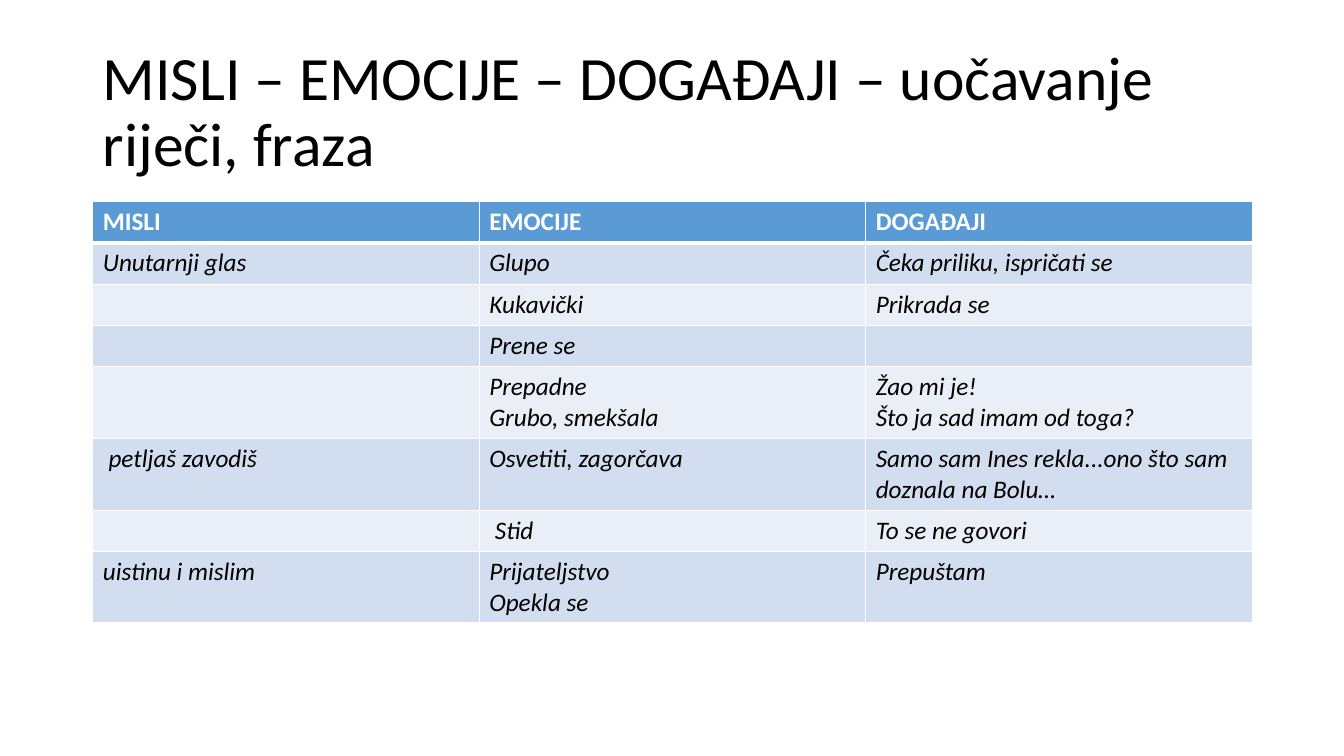
from lxml.etree import SubElement
from pptx import Presentation
from pptx.dml.color import RGBColor
from pptx.enum.text import MSO_ANCHOR, PP_ALIGN
from pptx.oxml.ns import qn
from pptx.util import Inches, Pt

TITLE = "MISLI – EMOCIJE – DOGAĐAJI – uočavanje riječi, fraza"
ROWS = [
    ("MISLI", "EMOCIJE", "DOGAĐAJI"),
    ("Unutarnji glas", "Glupo", "Čeka priliku, ispričati se"),
    ("", "Kukavički", "Prikrada se"),
    ("", "Prene se", ""),
    ("", "Prepadne\nGrubo, smekšala", "Žao mi je!\nŠto ja sad imam od toga?"),
    (" petljaš zavodiš", "Osvetiti, zagorčava",
     "Samo sam Ines rekla...ono što sam doznala na Bolu…"),
    ("", " Stid", "To se ne govori"),
    ("uistinu i mislim", "Prijateljstvo\nOpekla se", "Prepuštam"),
]
COLORS = {"text": "000000", "line": "FFFFFF", "head": "5B9BD5",
          "odd": "D2DEEF", "even": "EAEFF7"}
FONT = "Calibri"
WIDTH, HEIGHT = Inches(13.33), Inches(7.5)
LEFT, SPAN = Inches(0.92), Inches(11.5)
TOP, ROW_H = Inches(2), Inches(0.41)


def put_text(frame, text, size=18, color="text", bold=False, italic=False,
             spacing=None):
    frame.word_wrap = True
    for i, line in enumerate(text.split("\n")):
        par = frame.add_paragraph() if i else frame.paragraphs[0]
        par.alignment = PP_ALIGN.LEFT
        par.line_spacing = spacing
        font = par.font
        if line:
            run = par.add_run()
            run.text = line
            font = run.font
        font.name, font.size = FONT, Pt(size)
        font.bold, font.italic = bold, italic
        font.color.rgb = RGBColor.from_string(COLORS[color])


def set_fill(cell, color):
    cell.fill.solid()
    cell.fill.fore_color.rgb = RGBColor.from_string(COLORS[color])


def set_lines(cell, top=1, bottom=1):
    """Draw all four cell borders, with widths in points."""
    props = cell._tc.get_or_add_tcPr()
    sides = {"L": 1, "R": 1, "T": top, "B": bottom}
    for i, (side, width) in enumerate(sides.items()):
        line = SubElement(props, qn(f"a:ln{side}"), w=str(Pt(width)))
        fill = SubElement(line, qn("a:solidFill"))
        SubElement(fill, qn("a:srgbClr"), val=COLORS["line"])
        props.insert(i, line)


def add_title(slide):
    title = slide.shapes.title
    title.left, title.top = LEFT, Inches(0.4)
    title.width, title.height = SPAN, Inches(1.45)
    title.text_frame.vertical_anchor = MSO_ANCHOR.MIDDLE
    put_text(title.text_frame, TITLE, size=44, spacing=0.9)


def add_grid(slide):
    count, cols = len(ROWS), len(ROWS[0])
    table = slide.shapes.add_table(count, cols, LEFT, TOP, SPAN,
                                   ROW_H * count).table
    for r, row in enumerate(ROWS):
        head = r == 0
        band = "head" if head else "odd" if r % 2 else "even"
        for c, text in enumerate(row):
            cell = table.cell(r, c)
            put_text(cell.text_frame, text, color="line" if head else "text",
                     bold=head, italic=not head)
            set_fill(cell, band)
            set_lines(cell, top=3 if r == 1 else 1, bottom=3 if head else 1)


def main():
    deck = Presentation()
    deck.slide_width, deck.slide_height = WIDTH, HEIGHT
    slide = deck.slides.add_slide(deck.slide_layouts[5])
    add_title(slide)
    add_grid(slide)
    deck.save("out.pptx")


if __name__ == "__main__":
    main()
